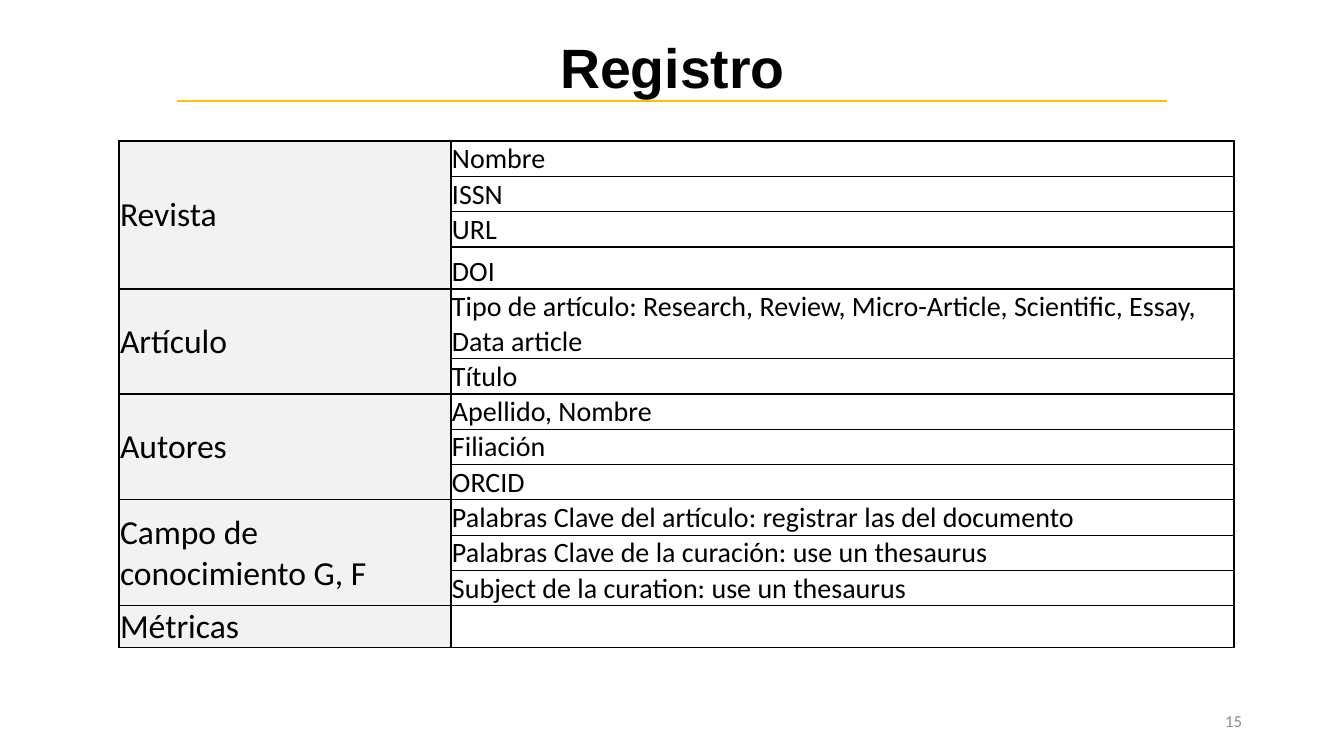
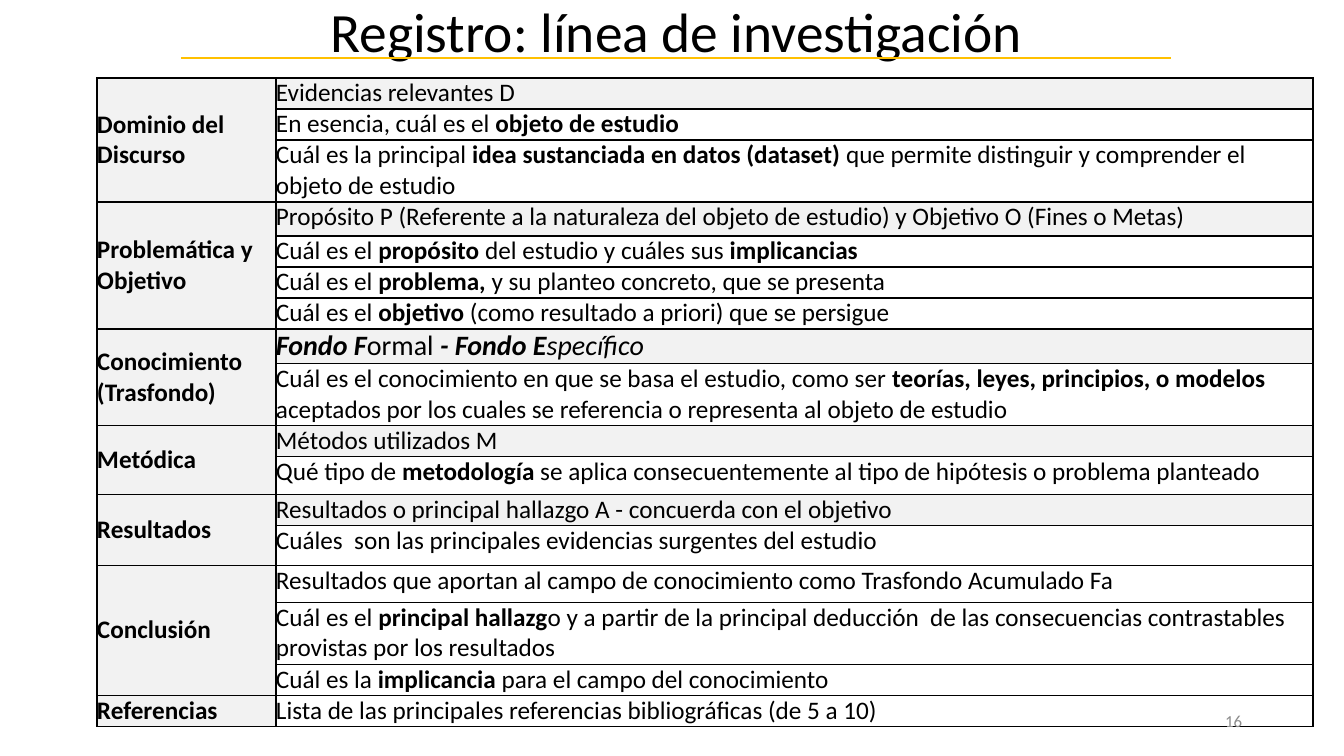
from lxml import etree
from pptx import Presentation
from pptx import util as u
from pptx.dml.color import RGBColor
from pptx.enum import shapes, text
from pptx.oxml import parse_xml
from pptx.oxml.ns import nsdecls, qn

# Shared format
BLACK = RGBColor(0x00, 0x00, 0x00)
GREY = RGBColor(0x8C, 0x8C, 0x8C)
LIGHT = RGBColor(0xF2, 0xF2, 0xF2)
GOLD = RGBColor(0xFF, 0xC0, 0x00)
TOP, MIDDLE, BOTTOM = (text.MSO_ANCHOR.TOP, text.MSO_ANCHOR.MIDDLE,
                       text.MSO_ANCHOR.BOTTOM)
SCALE = 914400 / 100.8
BORDER = ('<a:{side} %s w="12700"><a:solidFill><a:srgbClr val="{color}"/>'
          '</a:solidFill></a:{side}>' % nsdecls("a"))


def px(*lengths):
    return [u.Emu(round(n * SCALE)) for n in lengths]


def write(p, marked, **font):
    """Fill a paragraph; * switches bold and _ switches italic."""
    bold, italic = font.pop("bold", False), False
    for i, chunk in enumerate(marked.split("*")):
        for j, piece in enumerate(chunk.split("_")):
            italic ^= j > 0
            if not piece:
                continue
            r = p.add_run()
            r.text = piece
            values = dict(name="Calibri", bold=bold ^ (i % 2 == 1), italic=italic) | font
            r.font.color.rgb = values.pop("color", BLACK)
            for key, value in values.items():
                setattr(r.font, key, value)


# Groups: label, whether the first row is shaded, rows of (height, text, own size)
registro = [
    ("Revista", False, [(35, "Nombre"), (35, "ISSN"), (35, "URL"), (42, "DOI")]),
    ("Artículo", False, [
        (69, "Tipo de artículo: Research, Review, Micro-Article, Scientific, Essay, Data article"),
        (35, "Título")]),
    ("Autores", False, [(35, "Apellido, Nombre"), (35, "Filiación"), (35, "ORCID")]),
    ("Campo de conocimiento G, F", False, [
        (35, "Palabras Clave del artículo: registrar las del documento"),
        (35, "Palabras Clave de la curación: use un thesaurus"),
        (35, "Subject de la curation: use un thesaurus")]),
    ("Métricas", False, [(42, "")]),
]
linea = [
    ("Dominio del Discurso", True, [
        (31, "Evidencias relevantes D"),
        (31, "En esencia, cuál es el *objeto de estudio*"),
        (62, "Cuál es la principal* idea sustanciada en datos (dataset)* que permite "
             "distinguir y comprender el objeto de estudio")]),
    ("Problemática y Objetivo", True, [
        (34, "Propósito P (Referente a la naturaleza del objeto de estudio) "
             "y Objetivo O (Fines o Metas)"),
        (31, "Cuál es el *propósito* del estudio y cuáles sus *implicancias*"),
        (31, "Cuál es el *problema,* y su planteo concreto, que se presenta"),
        (31, "Cuál es el *objetivo* (como resultado a priori) que se persigue")]),
    ("Conocimiento (Trasfondo)", True, [
        (34, "_*Fondo F*_ormal_* - Fondo E*specífico_", 20),
        (62, "Cuál es el conocimiento en que se basa el estudio, como ser* teorías, leyes, "
             "principios, o modelos* aceptados por los cuales se referencia o representa "
             "al objeto de estudio")]),
    ("Metódica", True, [
        (31, "Métodos utilizados M"),
        (38, "Qué tipo de *metodología* se aplica consecuentemente al tipo de hipótesis "
             "o problema planteado")]),
    ("Resultados", True, [
        (31, "Resultados o principal hallazgo A - concuerda con el objetivo"),
        (40, "Cuáles  son las principales evidencias surgentes del estudio")]),
    ("Conclusión", False, [
        (37, "Resultados que aportan al campo de conocimiento como Trasfondo Acumulado Fa"),
        (62, "Cuál es el* principal hallazg*o y a partir de la principal deducción  de las "
             "consecuencias contrastables provistas por los resultados"),
        (31, "Cuál es la *implicancia* para el campo del conocimiento")]),
    ("Referencias", False, [
        (31, "Lista de las principales referencias bibliográficas (de 5 a 10)")]),
]

pages = [
    dict(number="15", title="Registro", title_font=dict(name="Arial", bold=True),
         title_box=(93, 40, 1159, 62), rule=(177, 101), at=(119, 141), cols=(332, 783),
         groups=registro, label=dict(size=u.Pt(24)), size=20, anchor=BOTTOM, inset=1),
    dict(number="16", title="Registro: línea de investigación", title_font={},
         title_box=(97, 0, 1159, 70), rule=(181, 58), at=(97, 78), cols=(179, 1037),
         groups=linea, label=dict(size=u.Pt(18), bold=True), size=18, anchor=TOP, inset=0),
]

prs = Presentation()
prs.slide_width, prs.slide_height = px(1344, 756)

for page in pages:
    s = prs.slides.add_slide(prs.slide_layouts[5])

    # Title
    sp = s.shapes.title
    sp.left, sp.top, sp.width, sp.height = px(*page["title_box"])
    tf = sp.text_frame
    tf.vertical_anchor, tf.auto_size = MIDDLE, text.MSO_AUTO_SIZE.NONE
    p = tf.paragraphs[0]
    p.alignment, p.line_spacing = text.PP_ALIGN.CENTER, 0.9
    write(p, page["title"], size=u.Pt(39.6), **page["title_font"])

    # Table
    rows = [row for group in page["groups"] for row in group[2]]
    frame = s.shapes.add_table(
        len(rows), 2, *px(*page["at"], sum(page["cols"]), sum(row[0] for row in rows)))
    table = frame.table
    table.first_row = table.horz_banding = False
    for column, width in zip(table.columns, px(*page["cols"])):
        column.width = width
    for row, height in zip(table.rows, px(*(row[0] for row in rows))):
        row.height = height

    for cell in table.iter_cells():
        cell.fill.background()
        cell.margin_left, cell.margin_top, cell.margin_right = px(*[page["inset"]] * 3)
        cell.margin_bottom = 0
        cell.vertical_anchor = page["anchor"]

    # Groups of rows, each with a label on the left
    first = 0
    for label, shaded, items in page["groups"]:
        head = table.cell(first, 0)
        if len(items) > 1:
            head.merge(table.cell(first + len(items) - 1, 0))
        head.fill.solid()
        head.fill.fore_color.rgb = LIGHT
        head.vertical_anchor = MIDDLE
        write(head.text_frame.paragraphs[0], label, **page["label"])
        for i, (_, words, *size) in enumerate(items):
            cell = table.cell(first + i, 1)
            if shaded and i == 0:
                cell.fill.solid()
                cell.fill.fore_color.rgb = LIGHT
            write(cell.text_frame.paragraphs[0], words, size=u.Pt((size or [page["size"]])[0]))
        first += len(items)

    # Cell borders
    for cell in table.iter_cells():
        for i, side in enumerate(("lnL", "lnR", "lnT", "lnB")):
            cell._tc.get_or_add_tcPr().insert(i, parse_xml(BORDER.format(side=side, color=BLACK)))

    # Slide number
    tf = s.shapes.add_textbox(*px(950, 701, 302, 40)).text_frame
    tf.word_wrap, tf.vertical_anchor = True, MIDDLE
    p = tf.paragraphs[0]
    p.alignment = text.PP_ALIGN.RIGHT
    write(p, page["number"], size=u.Pt(12), color=GREY)

    # Rule under the title
    x, y = page["rule"]
    line = s.shapes.add_connector(shapes.MSO_CONNECTOR.STRAIGHT, *px(x, y, x + 990, y))
    line.line.color.rgb, line.line.width = GOLD, u.Pt(1.5)
    etree.SubElement(line._element.spPr, qn("a:effectLst"))

prs.save("out.pptx")
